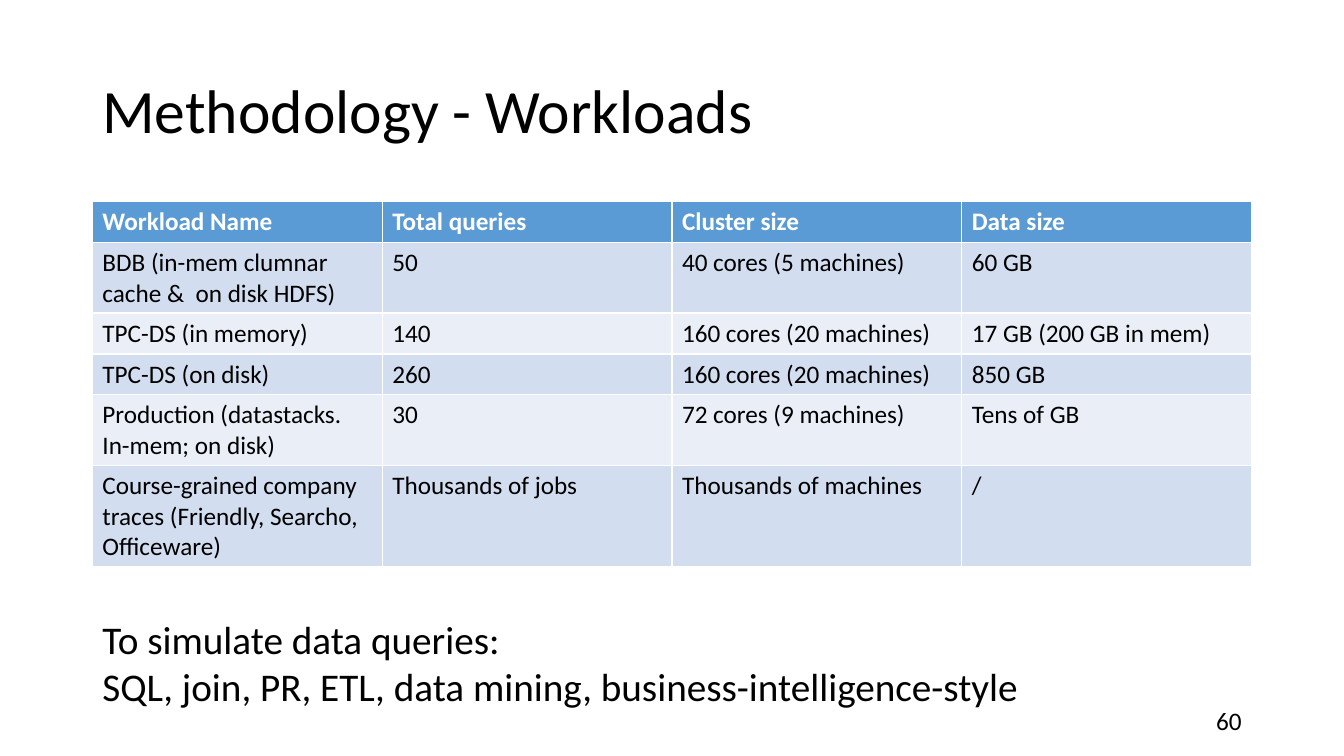
from pptx import Presentation
from pptx.dml.color import RGBColor
from pptx.enum.text import MSO_ANCHOR, PP_ALIGN
from pptx.util import Inches, Pt

BLACK = RGBColor(0x00, 0x00, 0x00)
WHITE = RGBColor(0xFF, 0xFF, 0xFF)
HEADER_BLUE = RGBColor(0x5B, 0x9B, 0xD5)
BAND_DARK = RGBColor(0xD2, 0xDE, 0xEF)
BAND_LIGHT = RGBColor(0xEA, 0xEF, 0xF7)

FONT = "Calibri"
UNIT = Inches(13.333) / 160  # the slide is a grid of 160 columns by 90 rows
LEFT, WIDTH = 11, 138
ROW_HEIGHT = 4.87

WORKLOADS = [
    ("Workload Name", "Total queries", "Cluster size", "Data size"),
    ("BDB (in-mem clumnar cache &  on disk HDFS)", "50", "40 cores (5 machines)", "60 GB"),
    ("TPC-DS (in memory)", "140", "160 cores (20 machines)", "17 GB (200 GB in mem)"),
    ("TPC-DS (on disk)", "260", "160 cores (20 machines)", "850 GB"),
    ("Production (datastacks. In-mem; on disk)", "30", "72 cores (9 machines)", "Tens of GB"),
    ("Course-grained company traces (Friendly, Searcho, Officeware)",
     "Thousands of jobs", "Thousands of machines", "/"),
]


def grid(*cells):
    return [round(c * UNIT) for c in cells]


def write(tf, text, size=18, color=BLACK, bold=False, align=PP_ALIGN.LEFT, spacing=1.0):
    """Fill a text frame, one paragraph per line of text."""
    for i, line in enumerate(text.split("\n")):
        p = tf.add_paragraph() if i else tf.paragraphs[0]
        p.alignment = align
        p.line_spacing = spacing
        r = p.add_run()
        r.text = line
        r.font.name = FONT
        r.font.size = Pt(size)
        r.font.bold = bold
        r.font.color.rgb = color


def add_text(s, box, text, anchor=MSO_ANCHOR.TOP, wrap=True, **style):
    tf = s.shapes.add_textbox(*grid(*box)).text_frame
    tf.word_wrap = wrap
    tf.vertical_anchor = anchor
    write(tf, text, **style)


def add_banded_table(s, left, top, width, rows):
    """Add a table whose white rules come from the default table style."""
    box = grid(left, top, width, ROW_HEIGHT * len(rows))
    table = s.shapes.add_table(len(rows), len(rows[0]), *box).table
    for i, row in enumerate(rows):
        header = i == 0
        band = BAND_DARK if i % 2 else BAND_LIGHT
        for j, text in enumerate(row):
            cell = table.cell(i, j)
            cell.fill.solid()
            cell.fill.fore_color.rgb = HEADER_BLUE if header else band
            write(cell.text_frame, text, color=WHITE if header else BLACK, bold=header)


def main():
    prs = Presentation()
    prs.slide_width, prs.slide_height = grid(160, 90)
    s = prs.slides.add_slide(prs.slide_layouts[6])

    add_text(s, (LEFT, 4.8, WIDTH, 17.4), "Methodology - Workloads",
             anchor=MSO_ANCHOR.MIDDLE, size=44, spacing=0.9)
    add_banded_table(s, LEFT, 24, WIDTH, WORKLOADS)
    add_text(s, (LEFT, 72.7, 114.7, 12.5),
             "To simulate data queries:\n"
             "SQL, join, PR, ETL, data mining, business-intelligence-style",
             wrap=False, size=28)
    add_text(s, (113, 83.4, 36, 4.8), "60", anchor=MSO_ANCHOR.MIDDLE, align=PP_ALIGN.RIGHT)

    prs.save("out.pptx")


if __name__ == "__main__":
    main()
